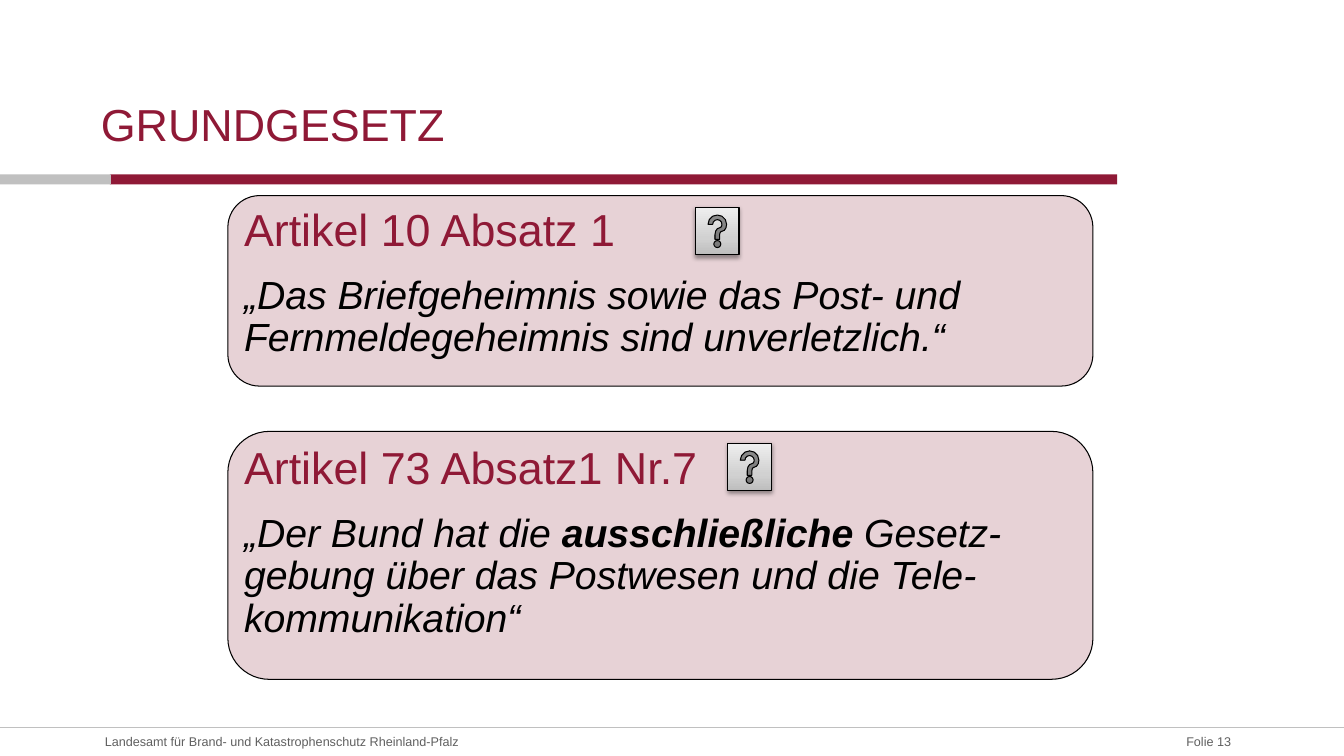
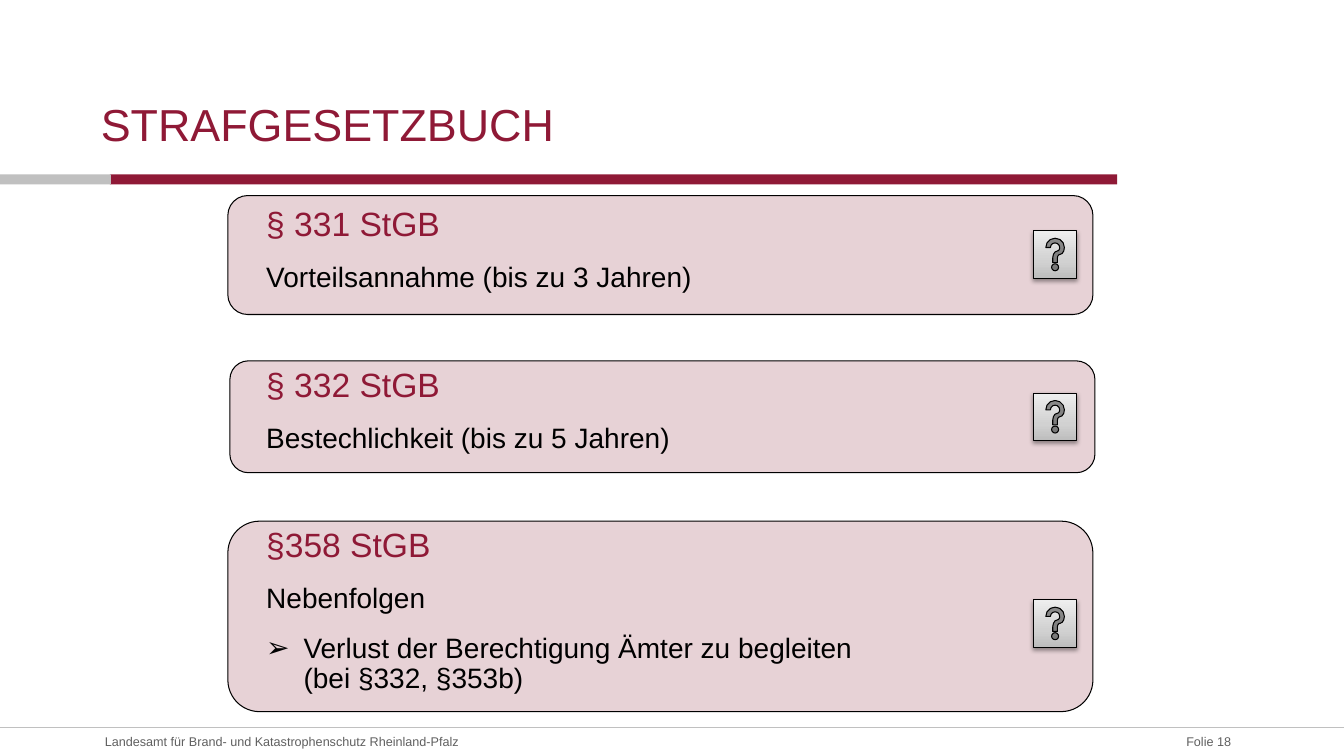
"""Build two slides on German legal articles, each quoted on tinted cards."""
import pptx
import pptx.dml.color
import pptx.enum.shapes
import pptx.enum.text
import pptx.oxml
import pptx.oxml.ns
import pptx.util

Inches = pptx.util.Inches
Pt = pptx.util.Pt
SHAPES = pptx.enum.shapes.MSO_SHAPE
ANCHOR = pptx.enum.text.MSO_ANCHOR
ALIGN = pptx.enum.text.PP_ALIGN

FONT = "Arial"
COLORS = {
    "wine": "8F1936",
    "silver": "C0C0C0",
    "footer": "606060",
    "card": "E7D2D6",
    "black": "000000",
    "button_dark": "BDBDBD",
    "button_middle": "D1D1D1",
    "button_light": "EEEEEE",
}
SLIDE_WIDTH, SLIDE_HEIGHT = 13.33, 7.5
CARD_WIDTH = 8.58
BUTTON_WIDTH, BUTTON_HEIGHT = 0.43, 0.47
FOOTER_TOP, FOOTER_HEIGHT = 7.22, 0.28
BULLET_INDENT = 0.37
PARAGRAPH_GAP = 14
FOOTER_TEXT = "Landesamt für Brand- und Katastrophenschutz Rheinland-Pfalz"

SLIDES = [
    {
        "title": "GRUNDGESETZ",
        "number": 13,
        "cards": [(2.26, 4.28, 2.46), (2.26, 1.94, 1.89)],
        "buttons": [(6.9, 2.06), (7.22, 4.4)],
        "body": (2.42, 2.06, 8.46, 4.69),
        "heading_size": 32,
        "text_size": 28,
        "section_gap": 61,
        "italic": True,
        "sections": [
            ("Artikel 10 Absatz 1", [
                [("„Das Briefgeheimnis sowie das Post- und "
                  "Fernmeldegeheimnis sind unverletzlich.“", False)],
            ]),
            ("Artikel 73 Absatz1 Nr.7", [
                [("„Der Bund hat die ", False),
                 ("ausschließliche", True),
                 (" Gesetz-gebung über das Postwesen und die "
                  "Tele-kommunikation“", False)],
            ]),
        ],
        "bullets": [],
    },
    {
        "title": "STRAFGESETZBUCH",
        "number": 18,
        "cards": [(2.26, 5.17, 1.89), (2.28, 3.58, 1.11), (2.26, 1.94, 1.18)],
        "buttons": [(10.25, 2.29), (10.25, 3.9), (10.25, 5.95)],
        "body": (2.64, 2.06, 6.61, 5),
        "heading_size": 24,
        "text_size": 20,
        "section_gap": 53,
        "italic": False,
        "sections": [
            ("§ 331 StGB", [[("Vorteilsannahme (bis zu 3 Jahren)", False)]]),
            ("§ 332 StGB", [[("Bestechlichkeit (bis zu 5 Jahren)", False)]]),
            ("§358 StGB", [[("Nebenfolgen", False)]]),
        ],
        "bullets": [
            ["Verlust der Berechtigung Ämter zu begleiten", "(bei §332, §353b)"],
        ],
    },
]


def color(name):
    """Return the palette colour of that name."""
    return pptx.dml.color.RGBColor.from_string(COLORS[name])


def place(shape, left, top, width, height):
    """Move and size a shape, in inches."""
    shape.left, shape.top = Inches(left), Inches(top)
    shape.width, shape.height = Inches(width), Inches(height)


def prepare_frame(shape, anchor):
    """Give a text frame wrapping, an anchor and no insets."""
    frame = shape.text_frame
    frame.word_wrap = True
    frame.auto_size = pptx.enum.text.MSO_AUTO_SIZE.NONE
    frame.vertical_anchor = anchor
    frame.margin_left = frame.margin_right = 0
    frame.margin_top = frame.margin_bottom = 0
    return frame


def add_run(paragraph, text, size, color_name, bold=False, italic=False):
    """Append one formatted run."""
    run = paragraph.add_run()
    run.text = text
    font = run.font
    font.name, font.size = FONT, Pt(size)
    font.bold, font.italic = bold, italic
    font.color.rgb = color(color_name)


def add_shape(slide, kind, left, top, width, height, fill, outlined=False):
    """Add a flat preset shape, optionally with a thin black outline."""
    shape = slide.shapes.add_shape(
        kind, Inches(left), Inches(top), Inches(width), Inches(height))
    shape.shadow.inherit = False
    shape.fill.solid()
    shape.fill.fore_color.rgb = color(fill)
    if outlined:
        outline(shape)
    else:
        shape.line.fill.background()
    return shape


def outline(shape):
    """Draw the thin black outline of cards and buttons."""
    shape.line.color.rgb = color("black")
    shape.line.width = Pt(0.75)


def add_help_button(slide, left, top):
    """Add a help button with a grey gradient and a soft shadow."""
    button = slide.shapes.add_shape(
        SHAPES.ACTION_BUTTON_HELP, Inches(left), Inches(top),
        Inches(BUTTON_WIDTH), Inches(BUTTON_HEIGHT))
    namespace = pptx.oxml.ns.nsdecls("a")
    stops = "".join(
        f'<a:gs pos="{position}"><a:srgbClr val="{COLORS[name]}"/></a:gs>'
        for position, name in (
            (0, "button_dark"), (35000, "button_middle"), (100000, "button_light")))
    properties = button.element.spPr
    properties.append(pptx.oxml.parse_xml(
        f'<a:gradFill {namespace} rotWithShape="1"><a:gsLst>{stops}</a:gsLst>'
        '<a:lin ang="16200000" scaled="0"/></a:gradFill>'))
    outline(button)
    properties.append(pptx.oxml.parse_xml(
        f'<a:effectLst {namespace}><a:outerShdw blurRad="{Pt(3.1)}" '
        f'dist="{Pt(1.6)}" dir="5400000" rotWithShape="0">'
        f'<a:srgbClr val="{COLORS["black"]}"><a:alpha val="38000"/></a:srgbClr>'
        '</a:outerShdw></a:effectLst>'))


def add_footer_text(slide, left, width, text, alignment):
    """Add one small text in the footer strip."""
    box = slide.shapes.add_textbox(
        Inches(left), Inches(FOOTER_TOP), Inches(width), Inches(FOOTER_HEIGHT))
    paragraph = prepare_frame(box, ANCHOR.MIDDLE).paragraphs[0]
    paragraph.alignment = alignment
    add_run(paragraph, text, 9, "footer")


def add_frame(slide, number):
    """Add the title band, the footer line and the footer texts."""
    add_shape(slide, SHAPES.RECTANGLE, 1.09, 1.73, 9.99, 0.1, "wine")
    add_shape(slide, SHAPES.RECTANGLE, 0, 1.73, 1.1, 0.1, "silver")
    line = slide.shapes.add_connector(
        pptx.enum.shapes.MSO_CONNECTOR.STRAIGHT, 0, Inches(FOOTER_TOP),
        Inches(SLIDE_WIDTH), Inches(FOOTER_TOP))
    line.line.color.rgb = color("silver")
    line.line.width = Pt(0.75)
    line.element.spPr.append(pptx.oxml.parse_xml(
        f'<a:effectLst {pptx.oxml.ns.nsdecls("a")}/>'))
    add_footer_text(slide, 10.59, 1.62, f"Folie {number}", ALIGN.RIGHT)
    add_footer_text(slide, 1.04, 7.35, FOOTER_TEXT, ALIGN.LEFT)


def fill_title(slide, text):
    """Place and fill the title placeholder."""
    title = slide.shapes.title
    place(title, 1, 0.48, 8.51, 1.01)
    paragraph = prepare_frame(title, ANCHOR.BOTTOM).paragraphs[0]
    paragraph.alignment = ALIGN.LEFT
    add_run(paragraph, text, 32, "wine")


def add_body_paragraph(frame, gap=PARAGRAPH_GAP, bullet=None):
    """Start the next body paragraph, with a hanging bullet if one is given."""
    first = not frame.paragraphs[0].runs
    paragraph = frame.paragraphs[0] if first else frame.add_paragraph()
    namespace = pptx.oxml.ns.nsdecls("a")
    properties = paragraph.element.get_or_add_pPr() if hasattr(
        paragraph, "element") else paragraph._p.get_or_add_pPr()
    indent = Inches(BULLET_INDENT) if bullet else 0
    properties.set("marL", str(indent))
    properties.set("indent", str(-indent))
    marker = f'buChar {namespace} char="{bullet}"' if bullet else f"buNone {namespace}"
    properties.append(pptx.oxml.parse_xml(f"<a:{marker}/>"))
    paragraph.alignment = ALIGN.LEFT
    paragraph.line_spacing = 0.9
    paragraph.space_before = Pt(0 if first else gap)
    paragraph.space_after = Pt(0)
    return paragraph


def fill_body(slide, content):
    """Place and fill the body placeholder with headed sections."""
    body = slide.placeholders[1]
    place(body, *content["body"])
    frame = prepare_frame(body, ANCHOR.TOP)
    size = content["text_size"]
    for heading, texts in content["sections"]:
        paragraph = add_body_paragraph(frame, content["section_gap"])
        add_run(paragraph, heading, content["heading_size"], "wine")
        for runs in texts:
            paragraph = add_body_paragraph(frame)
            for text, bold in runs:
                add_run(paragraph, text, size, "black", bold, content["italic"])
    for lines in content["bullets"]:
        paragraph = add_body_paragraph(frame, bullet="➢")
        for index, line in enumerate(lines):
            if index:
                paragraph.add_line_break()
            add_run(paragraph, line, size, "black")


def bring_to_front(shape):
    """Move a shape above everything drawn so far."""
    shape.element.getparent().append(shape.element)


def build_slide(presentation, content):
    """Build one slide from its content."""
    slide = presentation.slides.add_slide(presentation.slide_layouts[1])
    add_frame(slide, content["number"])
    for left, top, height in content["cards"]:
        add_shape(slide, SHAPES.ROUNDED_RECTANGLE, left, top, CARD_WIDTH, height,
                  "card", outlined=True)
    fill_title(slide, content["title"])
    fill_body(slide, content)
    for placeholder in list(slide.placeholders):
        bring_to_front(placeholder)
    for left, top in content["buttons"]:
        add_help_button(slide, left, top)


def main():
    """Create the presentation and save it."""
    presentation = pptx.Presentation()
    presentation.slide_width = Inches(SLIDE_WIDTH)
    presentation.slide_height = Inches(SLIDE_HEIGHT)
    for content in SLIDES:
        build_slide(presentation, content)
    presentation.save("out.pptx")


if __name__ == "__main__":
    main()
